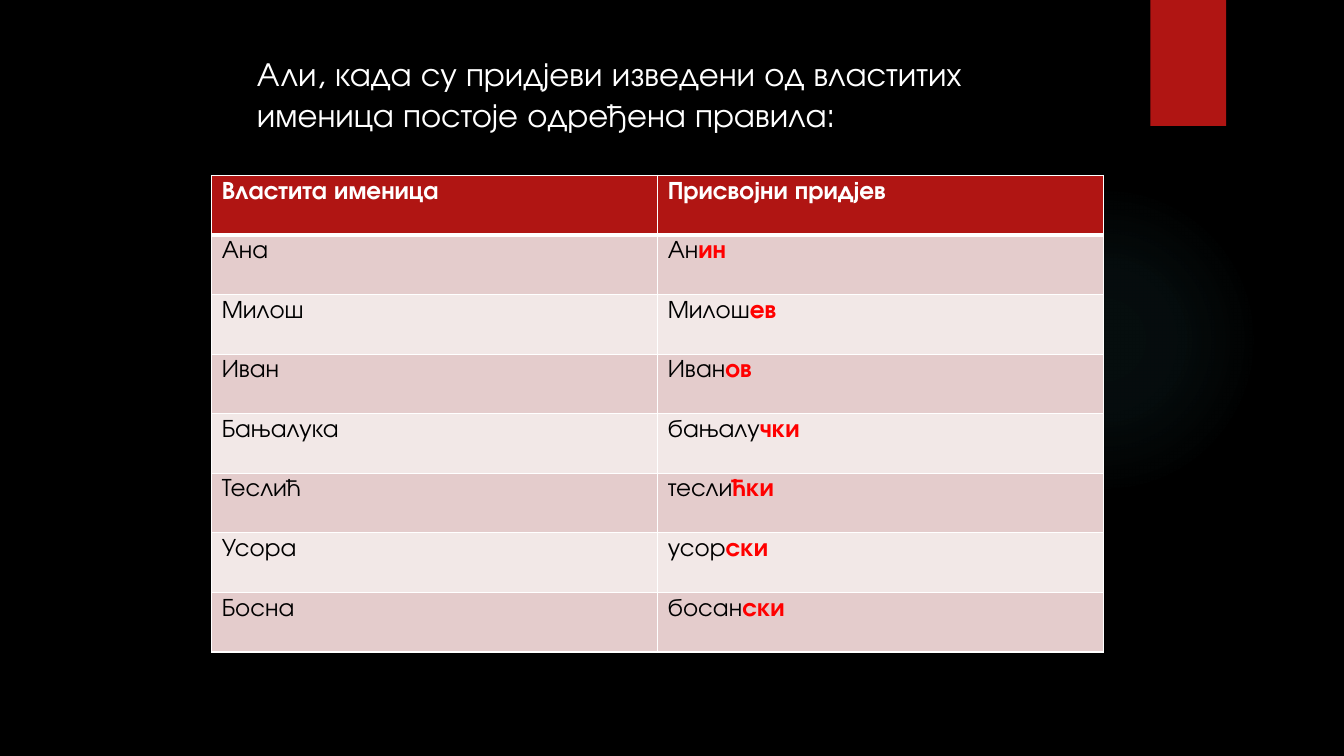
"""Build a slide on possessive adjectives derived from proper nouns."""
from dataclasses import dataclass

import lxml.etree
import pptx
import pptx.dml.color
import pptx.enum.shapes
import pptx.oxml
import pptx.oxml.ns
import pptx.shapes.autoshape
import pptx.slide
import pptx.table
import pptx.text.text
import pptx.util


@dataclass(frozen=True)
class Theme:
    font: str = "TeX Gyre Adventor"
    title_size: int = 24
    table_size: int = 18
    background: str = "000000"
    light_text: str = "FFFFFF"
    dark_text: str = "000000"
    suffix: str = "FF0000"
    accent: str = "B01513"
    glow: str = "50B9C1"
    border: str = "FFFFFF"
    bands: tuple[str, str] = ("E4CCCC", "F2E8E7")
    thin_line: int = 1
    thick_line: int = 3


@dataclass(frozen=True)
class Area:
    left: float
    top: float
    width: float
    height: float


@dataclass(frozen=True)
class Derivation:
    noun: str
    stem: str
    suffix: str


THEME = Theme()
SLIDE_WIDTH = pptx.util.Inches(13.33)
SLIDE_HEIGHT = pptx.util.Inches(7.5)

GLOW_AREA = Area(70.58, 24.4, 23.1, 41.07)
RIBBON_AREA = Area(85.6, 0, 5.63, 16.67)
TITLE_AREA = Area(18.38, 6.4, 59.48, 12.13)
TABLE_AREA = Area(15.75, 23.2, 66.38, 63.07)

GLOW_STOPS = ((0, 7), (36, 6), (69, 0))
TITLE = "Али, када су придјеви изведени од властитих именица постоје одређена правила:"
HEADINGS = ("Властита именица", "Присвојни придјев")
DERIVATIONS = (
    Derivation("Ана", "Ан", "ин"),
    Derivation("Милош", "Милош", "ев"),
    Derivation("Иван", "Иван", "ов"),
    Derivation("Бањалука", "бањалу", "чки"),
    Derivation("Теслић", "тесли", "ћки"),
    Derivation("Усора", "усор", "ски"),
    Derivation("Босна", "босан", "ски"),
)


def rgb(color: str) -> pptx.dml.color.RGBColor:
    return pptx.dml.color.RGBColor.from_string(color)


def place(area: Area) -> tuple[int, int, int, int]:
    return (
        round(area.left / 100 * SLIDE_WIDTH),
        round(area.top / 100 * SLIDE_HEIGHT),
        round(area.width / 100 * SLIDE_WIDTH),
        round(area.height / 100 * SLIDE_HEIGHT),
    )


def style_font(font: pptx.text.text.Font, size: int, color: str, bold: bool = False) -> None:
    font.name = THEME.font
    font.size = pptx.util.Pt(size)
    font.bold = bold
    font.color.rgb = rgb(color)


def add_plain_shape(
    slide: pptx.slide.Slide, kind: pptx.enum.shapes.MSO_SHAPE, area: Area
) -> pptx.shapes.autoshape.Shape:
    shape = slide.shapes.add_shape(kind, *place(area))
    shape.shadow.inherit = False
    shape.line.fill.background()
    return shape


def add_glow(slide: pptx.slide.Slide) -> None:
    shape = add_plain_shape(slide, pptx.enum.shapes.MSO_SHAPE.OVAL, GLOW_AREA)
    stops = "".join(
        f'<a:gs pos="{position * 1000}"><a:srgbClr val="{THEME.glow}">'
        f'<a:alpha val="{opacity * 1000}"/></a:srgbClr></a:gs>'
        for position, opacity in GLOW_STOPS
    )
    gradient = pptx.oxml.parse_xml(
        f'<a:gradFill {pptx.oxml.ns.nsdecls("a")}><a:gsLst>{stops}</a:gsLst>'
        '<a:path path="circle"><a:fillToRect l="50000" t="50000" r="50000" b="50000"/>'
        "</a:path></a:gradFill>"
    )
    shape.element.spPr.find(pptx.oxml.ns.qn("a:prstGeom")).addnext(gradient)


def add_ribbon(slide: pptx.slide.Slide) -> None:
    shape = add_plain_shape(slide, pptx.enum.shapes.MSO_SHAPE.RECTANGLE, RIBBON_AREA)
    shape.fill.solid()
    shape.fill.fore_color.rgb = rgb(THEME.accent)


def add_title(slide: pptx.slide.Slide) -> None:
    text_frame = slide.shapes.add_textbox(*place(TITLE_AREA)).text_frame
    text_frame.word_wrap = True
    paragraph = text_frame.paragraphs[0]
    paragraph.text = TITLE
    style_font(paragraph.font, THEME.title_size, THEME.light_text)


def style_cell(cell: pptx.table._Cell, fill: str, top: int, bottom: int) -> None:
    cell.fill.solid()
    cell.fill.fore_color.rgb = rgb(fill)
    properties = cell._tc.get_or_add_tcPr()
    widths = {"lnL": THEME.thin_line, "lnR": THEME.thin_line, "lnT": top, "lnB": bottom}
    for index, (side, width) in enumerate(widths.items()):
        line = lxml.etree.Element(pptx.oxml.ns.qn(f"a:{side}"), w=str(pptx.util.Pt(width)))
        solid = lxml.etree.SubElement(line, pptx.oxml.ns.qn("a:solidFill"))
        lxml.etree.SubElement(solid, pptx.oxml.ns.qn("a:srgbClr"), val=THEME.border)
        properties.insert(index, line)


def write_adjective(paragraph: pptx.text.text._Paragraph, derivation: Derivation) -> None:
    for text, color, bold in (
        (derivation.stem, THEME.dark_text, False),
        (derivation.suffix, THEME.suffix, True),
    ):
        run = paragraph.add_run()
        run.text = text
        style_font(run.font, THEME.table_size, color, bold)


def add_derivation_table(slide: pptx.slide.Slide) -> None:
    row_count = len(DERIVATIONS) + 1
    table = slide.shapes.add_table(row_count, len(HEADINGS), *place(TABLE_AREA)).table
    for column, heading in enumerate(HEADINGS):
        cell = table.cell(0, column)
        style_cell(cell, THEME.accent, THEME.thin_line, THEME.thick_line)
        paragraph = cell.text_frame.paragraphs[0]
        paragraph.text = heading
        style_font(paragraph.font, THEME.table_size, THEME.light_text, True)
    for row, derivation in enumerate(DERIVATIONS, start=1):
        top = THEME.thick_line if row == 1 else THEME.thin_line
        noun_cell, adjective_cell = table.rows[row].cells
        for cell in (noun_cell, adjective_cell):
            style_cell(cell, THEME.bands[(row - 1) % 2], top, THEME.thin_line)
        paragraph = noun_cell.text_frame.paragraphs[0]
        paragraph.text = derivation.noun
        style_font(paragraph.font, THEME.table_size, THEME.dark_text)
        write_adjective(adjective_cell.text_frame.paragraphs[0], derivation)


def main() -> None:
    presentation = pptx.Presentation()
    presentation.slide_width = SLIDE_WIDTH
    presentation.slide_height = SLIDE_HEIGHT
    slide = presentation.slides.add_slide(presentation.slide_layouts[6])
    slide.background.fill.solid()
    slide.background.fill.fore_color.rgb = rgb(THEME.background)
    add_glow(slide)
    add_ribbon(slide)
    add_title(slide)
    add_derivation_table(slide)
    presentation.save("out.pptx")


if __name__ == "__main__":
    main()
